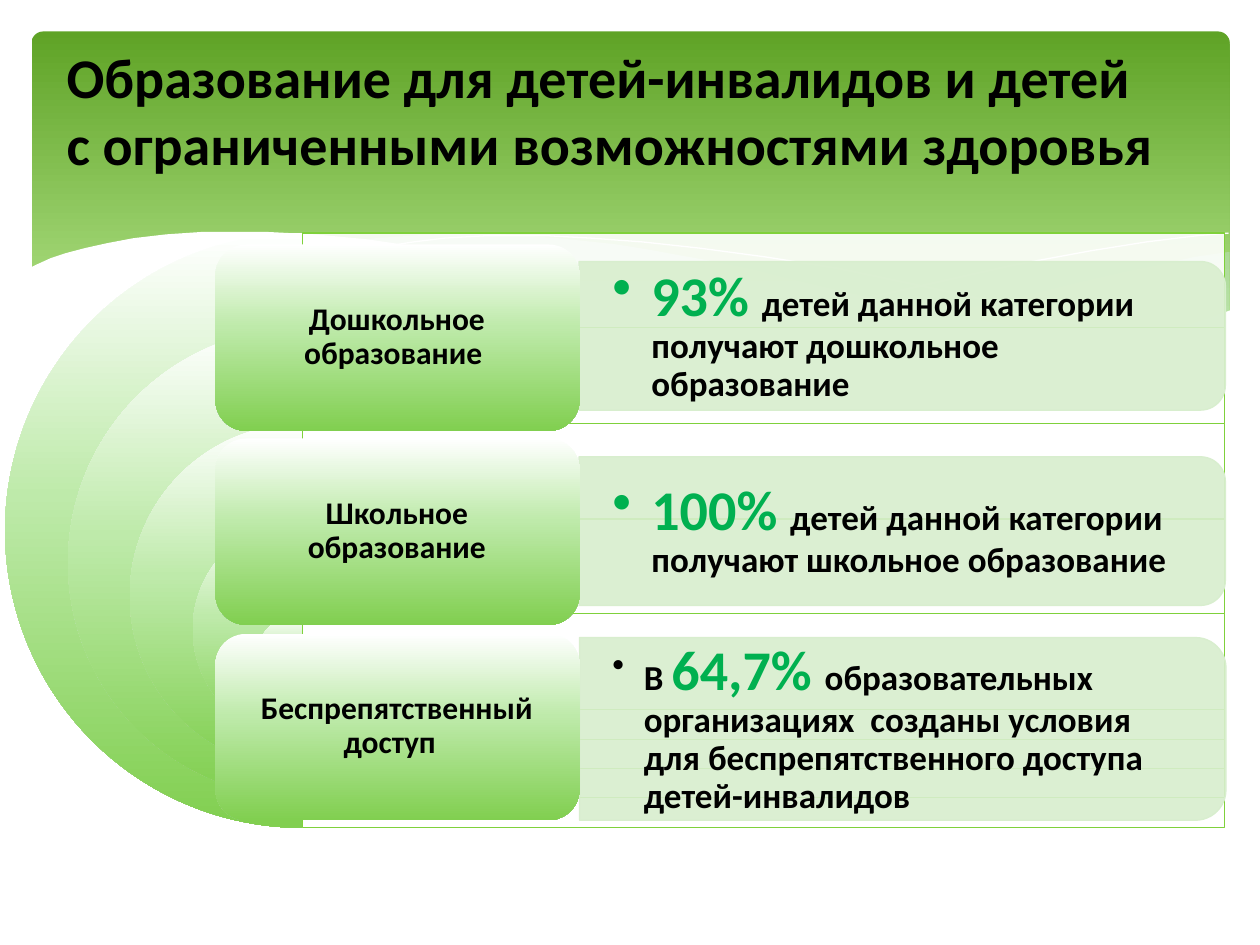
from pptx import Presentation
from pptx.dml.color import RGBColor
from pptx.enum.shapes import MSO_SHAPE
from pptx.enum.text import MSO_ANCHOR, MSO_AUTO_SIZE, PP_ALIGN
from pptx.oxml import parse_xml
from pptx.oxml.ns import nsdecls, qn
from pptx.util import Pt
from lxml import etree

ROUND, PIE, RECT = MSO_SHAPE.ROUNDED_RECTANGLE, MSO_SHAPE.PIE, MSO_SHAPE.RECTANGLE
BAR = MSO_SHAPE.ROUND_2_SAME_RECTANGLE
MIDDLE, CENTER, LEFT = MSO_ANCHOR.MIDDLE, PP_ALIGN.CENTER, PP_ALIGN.LEFT
GROW, FIXED = MSO_AUTO_SIZE.SHAPE_TO_FIT_TEXT, MSO_AUTO_SIZE.NONE

PX = 9144  # EMU per px, 100 px to the inch

THEME = {
    "font": "Calibri",
    "header": [(0, "5FA326"), (90, "B2E389")],
    "green": [(0, "FFFFFF"), (44, "BEEAAA"), (100, "81CF50")],
    "white": "FFFFFF", "wave": "D6ECFF", "bar": "D8EECE", "border": "7FD13B",
    "title": (32, "000000"), "figure": (32, "00B050"),
    "body": (20, "000000"), "label": (18, "000000"),
}


def paint(sp, fill=None, alpha=100, line=None, width=0.75):
    """Fill with a colour, a list of gradient stops or nothing."""
    sp.shadow.inherit = False
    if isinstance(fill, list):
        sp.fill.gradient()
        old = sp._element.spPr.find(qn("a:gradFill"))
        stops = "".join(f'<a:gs pos="{pos * 1000}"><a:srgbClr val="{c}"/></a:gs>' for pos, c in fill)
        new = parse_xml(f'<a:gradFill {nsdecls("a")} rotWithShape="1"><a:gsLst>{stops}</a:gsLst>'
                        '<a:lin ang="5400000" scaled="0"/></a:gradFill>')
        old.getparent().replace(old, new)
    elif fill:
        sp.fill.solid()
        sp.fill.fore_color.rgb = RGBColor.from_string(fill)
        if alpha < 100:
            clr = sp._element.spPr.find(qn("a:solidFill"))[0]
            etree.SubElement(clr, qn("a:alpha")).set("val", str(alpha * 1000))
    else:
        sp.fill.background()
    if line:
        sp.line.color.rgb = RGBColor.from_string(line)
        sp.line.width = Pt(width)
    else:
        sp.line.fill.background()


def write(box, paragraphs, frame, para, indent=0):
    """Add a text box; each paragraph is a list of (text, style) runs."""
    tf = s.shapes.add_textbox(*(v * PX for v in box)).text_frame
    for name, value in {"word_wrap": True, **frame}.items():
        setattr(tf, name, value)
    for i, runs in enumerate(paragraphs):
        p = tf.add_paragraph() if i else tf.paragraphs[0]
        for name, value in para.items():
            setattr(p, name, value)
        if indent:
            pPr = p._p.get_or_add_pPr()
            pPr.set("marL", str(indent * PX))
            pPr.set("indent", str(-indent * PX))
            etree.SubElement(pPr, qn("a:buChar")).set("char", "•")
        for text, style in runs:
            size, color = THEME[style]
            r = p.add_run()
            r.text = text
            for name, value in {"name": THEME["font"], "size": Pt(size), "bold": True}.items():
                setattr(r.font, name, value)
            r.font.color.rgb = RGBColor.from_string(color)


prs = Presentation()
prs.slide_width, prs.slide_height = 1000 * PX, 750 * PX
s = prs.slides.add_slide(prs.slide_layouts[6])

# Header panel
sp = s.shapes.add_shape(ROUND, *(v * PX for v in (25, 25, 951, 270)))
sp.adjustments[0] = 0.034
paint(sp, THEME["header"])

# Waves along the bottom of the header: points, closed, format
waves = [
    ([(975, 200), (948, 204), (921, 210), (891, 216), (861, 223), (805, 237), (753, 248),
      (706, 257), (661, 265), (691, 269), (719, 272), (745, 275), (769, 277), (803, 278),
      (844, 277), (872, 274), (897, 270), (921, 265), (942, 259), (963, 252), (976, 247),
      (976, 200)],
     True, {"fill": THEME["wave"], "alpha": 29}),
    ([(893, 273), (866, 269), (837, 265), (807, 260), (775, 254), (741, 247), (706, 240),
      (668, 231), (629, 222), (598, 214), (569, 208), (541, 203), (514, 198), (489, 194),
      (442, 189), (399, 186), (361, 185), (328, 187), (299, 189), (286, 191), (323, 196),
      (362, 203), (404, 211), (449, 222), (491, 232), (530, 240), (566, 248), (601, 255),
      (634, 261), (665, 266), (695, 270), (722, 274), (748, 276), (785, 278), (828, 278),
      (867, 276)],
     True, {"fill": THEME["wave"], "alpha": 40}),
    ([(309, 195), (328, 192), (353, 189), (387, 187), (433, 187), (469, 189), (510, 192),
      (556, 197), (608, 204), (665, 213), (727, 226), (795, 241), (869, 261), (907, 272)],
     False, {"line": THEME["white"], "width": 0}),
    ([(613, 257), (653, 246), (695, 235), (748, 223), (806, 210), (866, 199), (910, 192),
      (951, 187), (975, 185)],
     False, {"line": THEME["white"], "width": 0}),
    ([(977, 246), (959, 253), (940, 259), (920, 265), (899, 269), (875, 273), (850, 275),
      (823, 277), (793, 276), (761, 275), (726, 272), (688, 268), (648, 262), (603, 254),
      (555, 245), (503, 233), (447, 220), (391, 207), (340, 197), (292, 190), (250, 186),
      (211, 184), (161, 184), (132, 186), (106, 189), (85, 193), (67, 197), (52, 201),
      (40, 205), (29, 210), (23, 213), (23, 329), (977, 329)],
     True, {"fill": THEME["white"]}),
]
for points, closed, fmt in waves:
    fb = s.shapes.build_freeform(*points[0], scale=PX)
    fb.add_line_segments(points[1:], close=closed)
    paint(fb.convert_to_shape(), **fmt)

# Nested half discs, each with a panel to its right
for i in range(5):
    d, top = 472 - 99 * i, round(185 + 75.5 * i)
    sp = s.shapes.add_shape(PIE, (240 - d // 2) * PX, top * PX, d * PX, d * PX)
    sp.adjustments[0], sp.adjustments[1] = 54, 162
    paint(sp, THEME["green"])
    sp = s.shapes.add_shape(RECT, 240 * PX, top * PX, 732 * PX, d * PX)
    paint(sp, THEME["white"], 90, THEME["border"])

# Rows: label, bar middle, bar height, text height, indent, statement
rows = [
    ("Дошкольное образование ", 266, 118, 107, 31,
     [("93% ", "figure"), ("детей данной категории получают дошкольное образование", "body")]),
    ("Школьное образование", 421, 118, 107, 31,
     [("100% ", "figure"), ("детей данной категории получают школьное образование", "body")]),
    ("Беспрепятственный доступ  ", 578, 145, 131, 25,
     [("В ", "body"), ("64,7% ", "figure"),
      ("образовательных организациях  созданы условия для беспрепятственного доступа  "
       "детей-инвалидов", "body")]),
]
bar_frame = {"vertical_anchor": MIDDLE, "auto_size": FIXED, "margin_left": 27 * PX,
             "margin_right": 27 * PX, "margin_top": 14 * PX, "margin_bottom": 14 * PX}
card_frame = {"vertical_anchor": MIDDLE, "auto_size": FIXED, "margin_left": 7 * PX,
              "margin_right": 7 * PX, "margin_top": 4 * PX, "margin_bottom": 4 * PX}
for i, (label, mid, h, text_h, indent, statement) in enumerate(rows):
    # The bar is a tall shape turned on its side
    sp = s.shapes.add_shape(BAR, (716 - h // 2) * PX, (mid - 256) * PX, h * PX, 513 * PX)
    sp.rotation = 90
    paint(sp, THEME["bar"], 90, THEME["bar"])
    write((459, mid - text_h // 2, 507, text_h), [statement], bar_frame,
          {"level": 1, "alignment": LEFT, "line_spacing": 0.9, "space_after": Pt(3)}, indent)

    top = round(194 + 154.5 * i)
    sp = s.shapes.add_shape(ROUND, *(v * PX for v in (171, top, 289, 148)))
    paint(sp, THEME["green"])
    write((178, top + 7, 274, 133), [[(label, "label")]], card_frame,
          {"alignment": CENTER, "line_spacing": 0.9, "space_after": Pt(6)})

# Title
write((43, 29, 929, 118),
      [[("Образование для детей-инвалидов и детей", "title")],
       [("с ограниченными возможностями здоровья", "title")]],
      {"auto_size": GROW}, {"alignment": LEFT})

prs.save("out.pptx")
